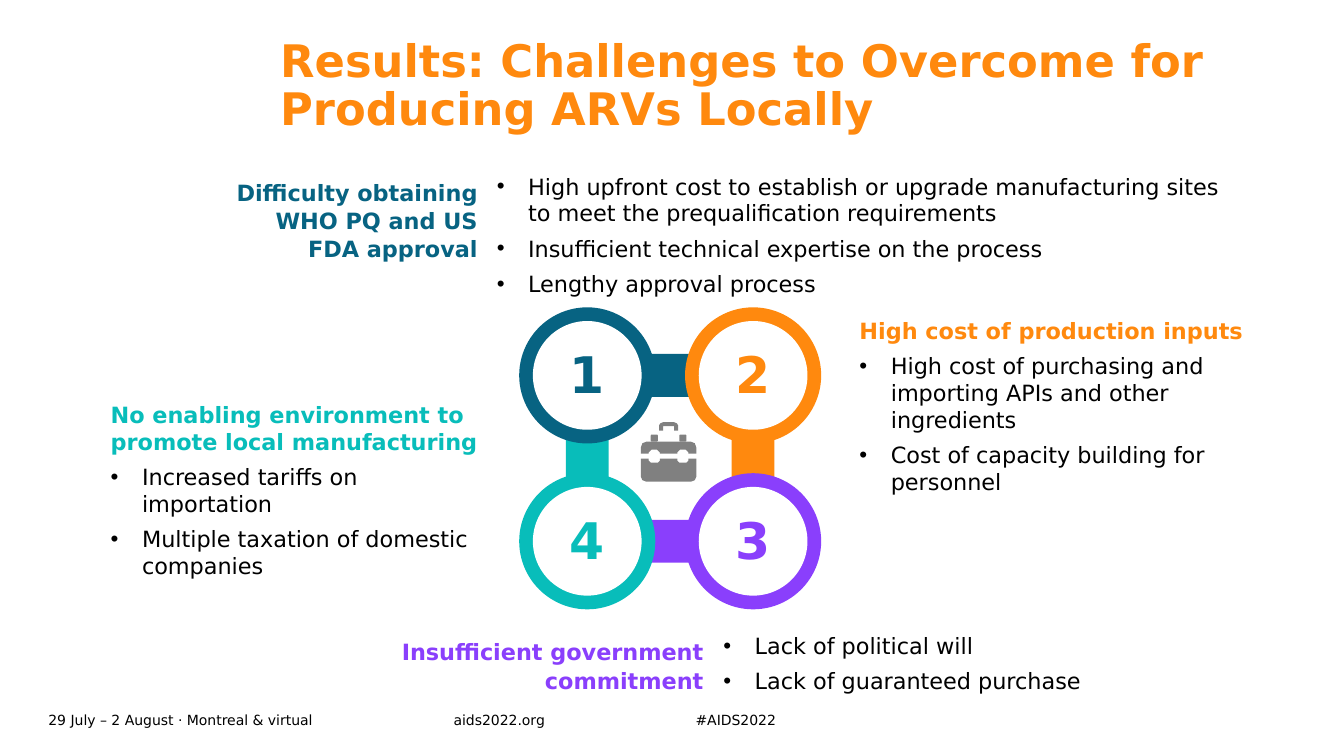
from lxml import etree
from pptx import Presentation
from pptx.dml.color import RGBColor
from pptx.enum.shapes import MSO_SHAPE
from pptx.enum.text import MSO_ANCHOR, MSO_AUTO_SIZE, PP_ALIGN
from pptx.oxml.ns import qn
from pptx.util import Cm, Pt

OVAL, RECTANGLE, ROUNDED = MSO_SHAPE.OVAL, MSO_SHAPE.RECTANGLE, MSO_SHAPE.ROUNDED_RECTANGLE
LEFT, CENTER, RIGHT = PP_ALIGN.LEFT, PP_ALIGN.CENTER, PP_ALIGN.RIGHT
TOP, MIDDLE = MSO_ANCHOR.TOP, MSO_ANCHOR.MIDDLE
NO_FIT = MSO_AUTO_SIZE.NONE

BLUE, ORANGE, PURPLE, TEAL = "076382", "FF890E", "8A3FFC", "08BDBA"
BLACK, WHITE, GREY = "000000", "FFFFFF", "808080"


def color(hex_string):
    return RGBColor.from_string(hex_string)


class SlideBuilder:
    font_name = "DejaVu Sans"
    text_size = 16
    paragraph_gap = 6

    def __init__(self, page):
        self.page = page

    def place(self, box, left, top, width, height):
        box.left, box.top = Cm(left), Cm(top)
        box.width, box.height = Cm(width), Cm(height)

    def frame(self, box, anchor=TOP, inset=True):
        frame = box.text_frame
        frame.word_wrap = True
        frame.auto_size = NO_FIT
        frame.vertical_anchor = anchor
        across, down = (0.25, 0.13) if inset else (0, 0)
        frame.margin_left = frame.margin_right = Cm(across)
        frame.margin_top = frame.margin_bottom = Cm(down)
        return frame

    def add_span(self, para, text, hex_color, size=text_size, bold=False,
                 align=LEFT, spacing=1.0, after=0):
        para.alignment = align
        para.line_spacing = spacing
        para.space_before, para.space_after = Pt(0), Pt(after)
        span = para.add_run()
        span.text = text
        span.font.name, span.font.size, span.font.bold = self.font_name, Pt(size), bold
        span.font.color.rgb = color(hex_color)

    def bullet(self, para, symbol=None):
        properties = para._p.get_or_add_pPr()
        hanging = Cm(0.79) if symbol else 0
        properties.set("marL", str(hanging))
        properties.set("indent", str(-hanging))
        if symbol:
            etree.SubElement(properties, qn("a:buChar")).set("char", symbol)
        else:
            etree.SubElement(properties, qn("a:buNone"))

    def title(self, text, area):
        box = self.page.shapes.title
        self.place(box, *area)
        frame = self.frame(box, inset=False)
        self.add_span(frame.paragraphs[0], text, ORANGE, 32, True, spacing=0.9)

    def bullets(self, index, area, items, heading=None, hex_color=BLACK):
        box = self.page.placeholders[index]
        self.place(box, *area)
        frame = self.frame(box)
        lines = ([heading] if heading else []) + items
        for number, line in enumerate(lines):
            para = frame.add_paragraph() if number else frame.paragraphs[0]
            is_heading = line == heading
            self.bullet(para, None if is_heading else "•")
            self.add_span(para, line, hex_color if is_heading else BLACK,
                          bold=is_heading, after=self.paragraph_gap)

    def text(self, text, area, hex_color, anchor=TOP, inset=True, **style):
        box = self.page.shapes.add_textbox(*map(Cm, area))
        frame = self.frame(box, anchor, inset)
        self.add_span(frame.paragraphs[0], text, hex_color, **style)

    def paint(self, shape, hex_color):
        shape.shadow.inherit = False
        shape.fill.solid()
        shape.fill.fore_color.rgb = color(hex_color)
        shape.line.fill.background()

    def centered(self, kind, middle_x, middle_y, size, hex_color):
        shape = self.page.shapes.add_shape(
            kind, Cm(middle_x - size / 2), Cm(middle_y - size / 2), Cm(size), Cm(size))
        self.paint(shape, hex_color)

    def mirrored(self, axis, right_half, hex_color):
        """Draw an outline from its right half, given as offsets from the axis."""
        points = [(axis + x, y) for x, y in right_half]
        points += [(axis - x, y) for x, y in reversed(right_half)]
        points = [(Cm(x), Cm(y)) for x, y in points]
        builder = self.page.shapes.build_freeform(*points[0])
        builder.add_line_segments(points[1:], close=True)
        self.paint(builder.convert_to_shape(), hex_color)


def main():
    deck = Presentation()
    deck.slide_width, deck.slide_height = Cm(33.87), Cm(19.05)
    # The comparison layout offers a title and four body placeholders
    slide = SlideBuilder(deck.slides.add_slide(deck.slide_layouts[4]))

    # Title and footer
    slide.title("Results: Challenges to Overcome for Producing ARVs Locally",
                (7.06, 0.97, 26.8, 3.4))
    for text, left, width in [("29 July – 2 August · Montreal & virtual", 1.22, 10.21),
                              ("aids2022.org", 11.43, 4.9),
                              ("#AIDS2022", 17.53, 4.9)]:
        slide.text(text, (left, 17.83, width, 0.61), BLACK, MIDDLE, False, size=10)

    # Ring of four numbered challenges, clockwise, each linked to the next
    left, right, upper, lower = 14.8, 18.98, 9.46, 13.64
    nodes = [(left, upper, BLUE), (right, upper, ORANGE),
             (right, lower, PURPLE), (left, lower, TEAL)]
    for (x, y, hue), (next_x, next_y, _) in zip(nodes, nodes[1:] + nodes[:1]):
        slide.centered(RECTANGLE, (x + next_x) / 2, (y + next_y) / 2, 1.08, hue)
    for number, (x, y, hue) in enumerate(nodes, 1):
        slide.centered(OVAL, x, y, 3.43, hue)
        slide.centered(OVAL, x, y, 2.74, WHITE)
        slide.text(str(number), (x - 1, y - 0.95, 2, 1.8), hue,
                   size=36, bold=True, align=CENTER)

    # Toolbox: handle, lid, bin and two latches
    axis = 16.85
    handle = [(0.14, 10.64), (0.21, 10.67), (0.24, 10.72), (0.24, 10.85),
              (0.14, 10.85), (0.14, 10.74)]
    lid = [(0.56, 11.13), (0.66, 11.17), (0.7, 11.28), (0.7, 11.43), (0.5, 11.43),
           (0.5, 11.4), (0.43, 11.33), (0.29, 11.33), (0.22, 11.4), (0.22, 11.43)]
    tool_bin = [(0.22, 11.56), (0.22, 11.61), (0.27, 11.66), (0.45, 11.66),
                (0.5, 11.61), (0.5, 11.56), (0.7, 11.56), (0.7, 12.01),
                (0.66, 12.1), (0.56, 12.14)]
    for outline in (handle, lid, tool_bin):
        slide.mirrored(axis, outline, GREY)
    for offset in (-0.36, 0.36):
        slide.centered(ROUNDED, axis + offset, 11.04, 0.18, GREY)

    # Challenge 1
    slide.text("Difficulty obtaining WHO PQ and US FDA approval",
               (5.56, 4.34, 6.73, 3.53), BLUE, bold=True, align=RIGHT, spacing=1.05)
    slide.bullets(1, (12.27, 4.22, 18.87, 3.53), [
        "High upfront cost to establish or upgrade manufacturing sites "
        "to meet the prequalification requirements",
        "Insufficient technical expertise on the process",
        "Lengthy approval process"])

    # Challenge 2
    slide.bullets(2, (21.41, 7.85, 10.72, 6.58), [
        "High cost of purchasing and importing APIs and other ingredients",
        "Cost of capacity building for personnel"],
        "High cost of production inputs", ORANGE)

    # Challenge 3
    slide.text("Insufficient government commitment", (9.19, 15.93, 8.79, 2.46),
               PURPLE, bold=True, align=RIGHT, spacing=1.05)
    slide.bullets(3, (17.98, 15.8, 13.36, 2.46),
                  ["Lack of political will", "Lack of guaranteed purchase"])

    # Challenge 4
    slide.bullets(4, (2.54, 9.98, 10.13, 6.43), [
        "Increased tariffs on importation",
        "Multiple taxation of domestic companies"],
        "No enabling environment to promote local manufacturing", TEAL)

    deck.save("out.pptx")


if __name__ == "__main__":
    main()
